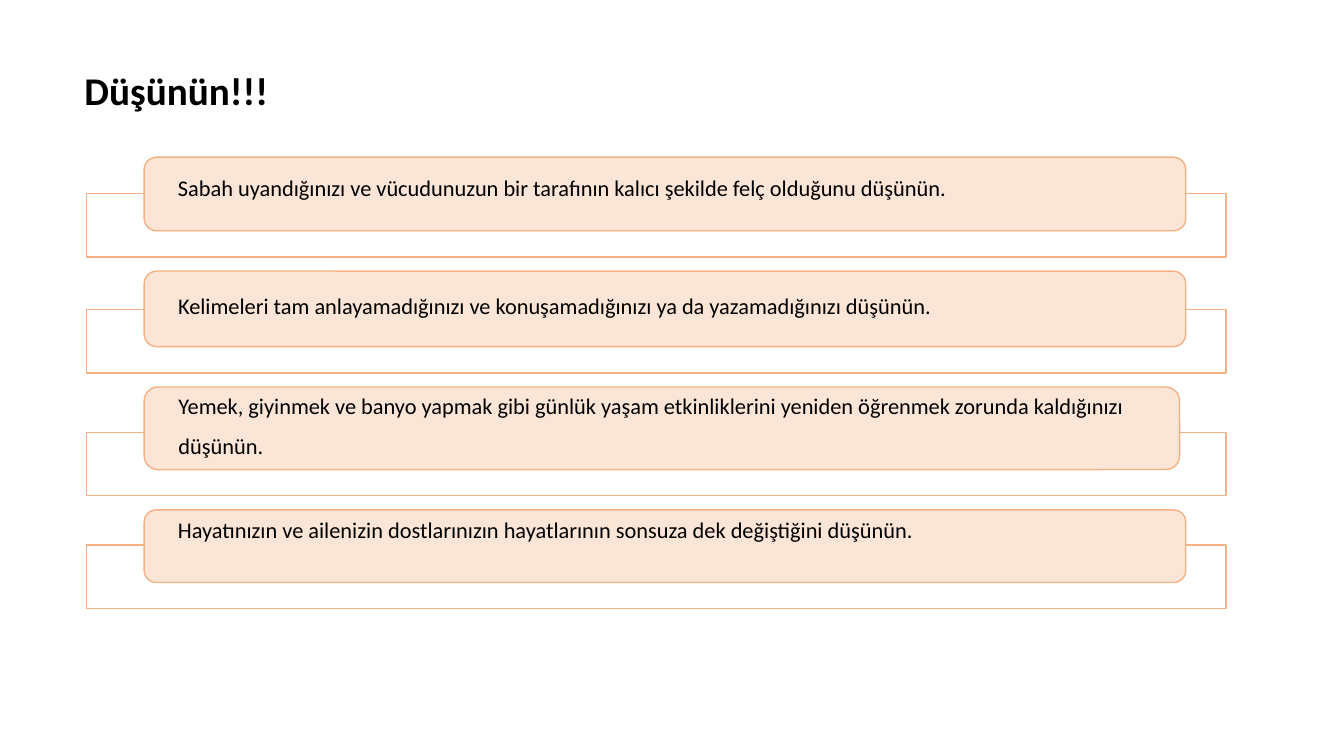
from pptx import Presentation
from pptx import util as u
from pptx.dml.color import RGBColor
from pptx.enum import shapes, text
from pptx.oxml.ns import qn
from lxml import etree

COLORS = {"ink": "000000", "card": "FBE5D6", "outline": "F4B183", "frame": "FFFFFF"}
FONT = "Calibri"

deck = Presentation()
deck.slide_width = u.Inches(13.33)
deck.slide_height = u.Inches(7.5)
page = deck.slides.add_slide(deck.slide_layouts[6])
across = deck.slide_width / 100
down = deck.slide_height / 100


def add_panel(kind, left, top, width, height, fill):
    panel = page.shapes.add_shape(
        kind, int(left * across), int(top * down), int(width * across), int(height * down))
    panel.shadow.inherit = False
    panel.fill.solid()
    panel.fill.fore_color.rgb = RGBColor.from_string(COLORS[fill])
    panel.line.color.rgb = RGBColor.from_string(COLORS["outline"])
    panel.line.width = u.Pt(1)
    return panel


def write(para, words, size, spacing, bold=False):
    para.alignment = text.PP_ALIGN.LEFT
    para.line_spacing = spacing
    span = para.add_run()
    span.text = words
    span.font.name = FONT
    span.font.size = u.Pt(size)
    span.font.bold = bold
    span.font.color.rgb = RGBColor.from_string(COLORS["ink"])


title = page.shapes.add_textbox(
    int(5.55 * across), int(8.8 * down), int(75 * across), int(7.07 * down))
title.text_frame.word_wrap = True
write(title.text_frame.paragraphs[0], "Düşünün!!!", 28, 0.9, True)

FRAME_LEFT, FRAME_WIDTH, FRAME_HEIGHT = 6.45, 84.77, 8.4
CARD_LEFT, CARD_GAP, FRAME_DROP = 10.73, 5.33, 3.47

thoughts = [
    ("Sabah uyandığınızı ve vücudunuzun bir tarafının kalıcı şekilde felç olduğunu düşünün.",
     77.5, 9.73, 3.6, 1.5),
    ("Kelimeleri tam anlayamadığınızı ve konuşamadığınızı ya da yazamadığınızı düşünün.",
     77.5, 10, 2.53, 1.5),
    ("Yemek, giyinmek ve banyo yapmak gibi günlük yaşam etkinliklerini yeniden öğrenmek "
     "zorunda kaldığınızı düşünün.", 77.04, 10.93, 2.4, 1.5),
    ("Hayatınızın ve ailenizin dostlarınızın hayatlarının sonsuza dek değiştiğini düşünün.",
     77.5, 9.6, 3.87, 0.9),
]

card_top = 20.8
for words, card_width, card_height, lift, spacing in thoughts:
    card_bottom = card_top + card_height
    frame = add_panel(shapes.MSO_SHAPE.RECTANGLE, FRAME_LEFT,
                      card_bottom + FRAME_DROP - FRAME_HEIGHT, FRAME_WIDTH, FRAME_HEIGHT, "frame")
    frame_color = frame.fill._xPr.find(qn("a:solidFill"))[0]
    etree.SubElement(frame_color, qn("a:alpha")).set("val", "90000")

    card = add_panel(shapes.MSO_SHAPE.ROUNDED_RECTANGLE, CARD_LEFT, card_top,
                     card_width, card_height, "card")
    body = card.text_frame
    body.word_wrap = True
    body.vertical_anchor = text.MSO_ANCHOR.MIDDLE
    body.margin_left = body.margin_right = int(2.25 * across)
    body.margin_top = 0
    body.margin_bottom = int(lift * down)
    write(body.paragraphs[0], words, 16, spacing)
    card_top = card_bottom + CARD_GAP

deck.save("out.pptx")
